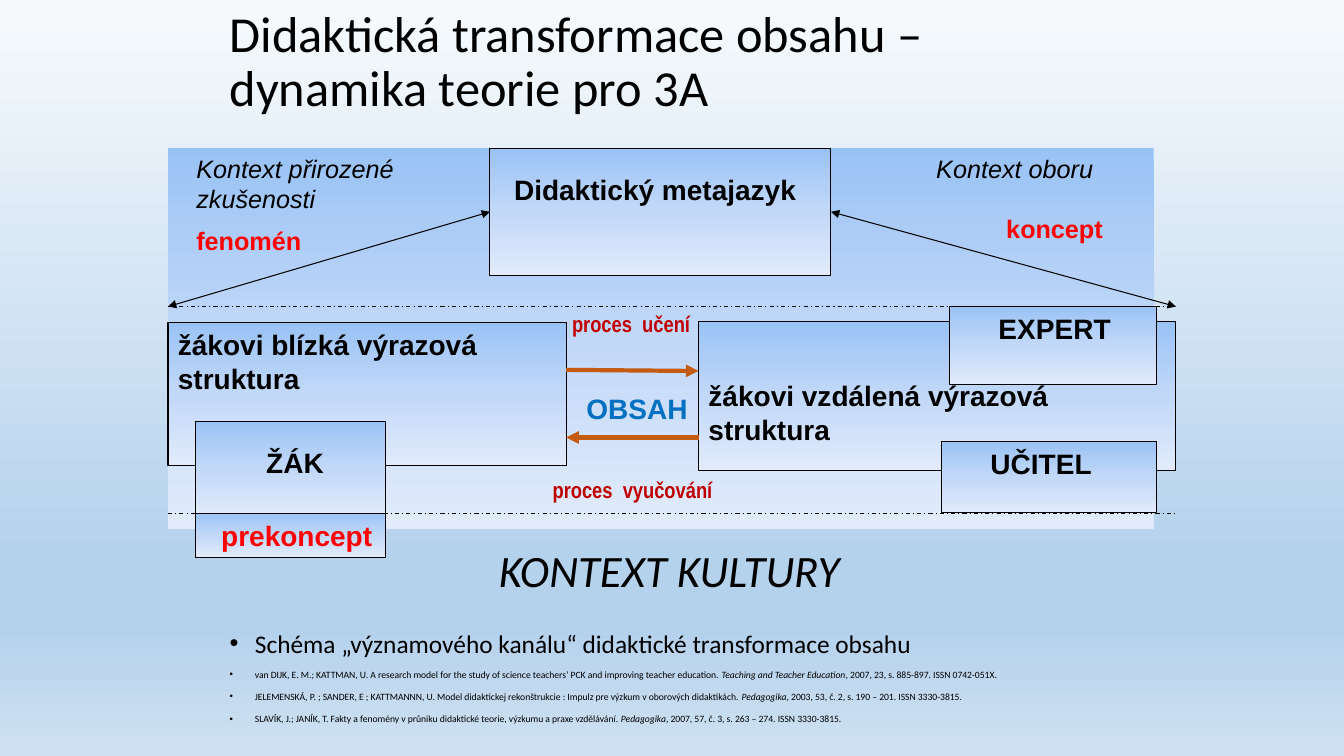
from lxml.etree import SubElement
from pptx import Presentation
from pptx.dml.color import RGBColor
from pptx.enum.dml import MSO_LINE
from pptx.enum.shapes import MSO_CONNECTOR, MSO_SHAPE
from pptx.enum.text import MSO_ANCHOR, PP_ALIGN
from pptx.oxml.ns import qn
from pptx.util import Pt

BLACK = RGBColor(0x00, 0x00, 0x00)
RED = RGBColor(0xFF, 0x00, 0x00)
DARK_RED = RGBColor(0xC0, 0x00, 0x00)
BLUE = RGBColor(0x00, 0x70, 0xC0)
ORANGE = RGBColor(0xC5, 0x5A, 0x11)

BACKGROUND_STOPS = [
    (0, RGBColor(0xF7, 0xFA, 0xFD)),
    (74, RGBColor(0xB5, 0xD2, 0xEC)),
    (83, RGBColor(0xB5, 0xD2, 0xEC)),
    (100, RGBColor(0xCE, 0xE1, 0xF2)),
]
BOX_STOPS = [
    (0, RGBColor(0x9A, 0xC3, 0xF5)),
    (50, RGBColor(0xC2, 0xD8, 0xF8)),
    (100, RGBColor(0xE1, 0xEB, 0xFB)),
]

LEFT, RIGHT = 120, 840
PANEL_TOP, UPPER_LINE, LOWER_LINE = 106, 219, 366.5
PUPIL_LEFT, PUPIL_WIDTH = 139.7, 136
NEAR_EDGE, FAR_EDGE = 404.4, 499

# Each reference: text before the journal, journal, text after it
REFERENCES = [
    ("van DIJK, E. M.; KATTMAN, U. A research model for the study of science teachers’ PCK "
     "and improving teacher education. ",
     "Teaching and Teacher Education", ", 2007, 23, s. 885-897. ISSN 0742-051X."),
    ("JELEMENSKÁ, P. ; SANDER, E ; KATTMANNN, U. Model didaktickej rekonštrukcie : "
     "Impulz pre výzkum v oborových didaktikách. ",
     "Pedagogika", ", 2003, 53, č. 2, s. 190 – 201. ISSN 3330-3815."),
    ("SLAVÍK, J.; JANÍK, T. Fakty a fenomény v průniku didaktické teorie, "
     "výzkumu a praxe vzdělávání. ",
     "Pedagogika", ", 2007, 57, č. 3, s. 263 – 274. ISSN 3330-3815."),
]


def fill_gradient(fill, element, stops):
    """Fill from top to bottom; element is the XML that holds the fill."""
    fill.gradient()
    fill.gradient_angle = 270
    stop_list = element.xpath(".//a:gsLst")[0]
    for stop in list(stop_list):
        stop_list.remove(stop)
    for position, color in stops:
        stop = SubElement(stop_list, qn("a:gs"), pos=str(position * 1000))
        SubElement(stop, qn("a:srgbClr"), val=str(color))


def style_font(paragraph, size, name="Arial", color=BLACK, bold=False, italic=None):
    font = paragraph.font
    font.size = Pt(size)
    font.name = name
    font.color.rgb = color
    font.bold = bold
    font.italic = italic


def add_box(slide, left, top, width, height, text="", margin_left=7.2, margin_top=3.6,
            color=BLACK, outlined=True):
    shape = slide.shapes.add_shape(MSO_SHAPE.RECTANGLE, Pt(left), Pt(top), Pt(width), Pt(height))
    shape.shadow.inherit = False
    fill_gradient(shape.fill, shape._element, BOX_STOPS)
    if outlined:
        shape.line.color.rgb = BLACK
        shape.line.width = Pt(0.75)
    else:
        shape.line.fill.background()
    if text:
        frame = shape.text_frame
        frame.vertical_anchor = MSO_ANCHOR.TOP
        frame.margin_left, frame.margin_top = Pt(margin_left), Pt(margin_top)
        paragraph = frame.paragraphs[0]
        paragraph.text = text
        paragraph.alignment = PP_ALIGN.LEFT
        style_font(paragraph, 20, color=color, bold=True)
    return shape


def add_text(slide, left, top, width, height, text, size, wrap=True, **font):
    """Add a text box and return its text frame."""
    frame = slide.shapes.add_textbox(Pt(left), Pt(top), Pt(width), Pt(height)).text_frame
    frame.word_wrap = wrap
    paragraph = frame.paragraphs[0]
    paragraph.text = text
    style_font(paragraph, size, **font)
    return frame


def add_context(slide, left, width, context, term, gap, indent=0):
    """Name a context in italics and, below it, its key term in red."""
    frame = add_text(slide, left, PANEL_TOP, width, 90, context, 18, italic=True)
    paragraph = frame.add_paragraph()
    paragraph.text = term
    paragraph.space_before = Pt(gap)
    paragraph._p.get_or_add_pPr().set("marL", str(Pt(indent)))
    style_font(paragraph, 18, color=RED, bold=True)


def add_line(slide, start, end, color=BLACK, width=0.75, dash=None, arrowheads=()):
    """arrowheads names the arrowed ends: headEnd is the start, tailEnd the end."""
    points = [Pt(value) for value in (*start, *end)]
    connector = slide.shapes.add_connector(MSO_CONNECTOR.STRAIGHT, *points)
    connector.line.color.rgb = color
    connector.line.width = Pt(width)
    if dash:
        connector.line.dash_style = dash
    line = connector.line._get_or_add_ln()
    for end_name in arrowheads:
        SubElement(line, qn(f"a:{end_name}"), type="triangle")
    SubElement(connector._element.spPr, qn("a:effectLst"))
    return connector


def format_bullet(paragraph, size):
    style_font(paragraph, size, name="Calibri")
    paragraph.line_spacing = 0.7
    paragraph.space_before = Pt(10)
    properties = paragraph._p.get_or_add_pPr()
    properties.set("marL", str(Pt(18)))
    properties.set("indent", str(Pt(-18)))
    bullet_font = properties.makeelement(qn("a:buFont"), {"typeface": "Arial"})
    bullet = properties.makeelement(qn("a:buChar"), {"char": "•"})
    run_defaults = properties.find(qn("a:defRPr"))
    run_defaults.addprevious(bullet_font)
    run_defaults.addprevious(bullet)


def add_sources(slide):
    frame = add_text(slide, 157, 451.4, 648, 79,
                     "Schéma „významového kanálu“ didaktické transformace obsahu", 18.1)
    format_bullet(frame.paragraphs[0], 18.1)
    for before, journal, after in REFERENCES:
        paragraph = frame.add_paragraph()
        for text in (before, journal, after):
            run = paragraph.add_run()
            run.text = text
            if text == journal:
                run.font.italic = True
        format_bullet(paragraph, 6.9)


def main():
    presentation = Presentation()
    presentation.slide_width, presentation.slide_height = Pt(960), Pt(540)
    slide = presentation.slides.add_slide(presentation.slide_layouts[6])
    fill_gradient(slide.background.fill, slide._element, BACKGROUND_STOPS)

    title = add_text(slide, 157, 0, 648, 90,
                     "Didaktická transformace obsahu – dynamika teorie pro 3A", 36, name="Calibri")
    title.vertical_anchor = MSO_ANCHOR.MIDDLE
    title.paragraphs[0].line_spacing = 0.9
    add_sources(slide)

    add_box(slide, LEFT, PANEL_TOP, 704, 272, outlined=False)
    add_box(slide, FAR_EDGE, 229.7, RIGHT - FAR_EDGE, 106.6,
            "žákovi vzdálená výrazová struktura", margin_top=41)
    add_box(slide, LEFT, 230.4, NEAR_EDGE - LEFT, 102.2, "žákovi blízká výrazová struktura")
    metalanguage = add_box(slide, 350, PANEL_TOP, 243.6, 90.6, "Didaktický metajazyk", 17.2, 17.4)

    for side, corner in ((1, LEFT), (3, RIGHT)):
        connector = add_line(slide, (corner, UPPER_LINE), (corner, UPPER_LINE),
                             arrowheads=("headEnd", "tailEnd"))
        connector.begin_connect(metalanguage, side)

    add_box(slide, PUPIL_LEFT, 301, PUPIL_WIDTH, 67.7, "ŽÁK", 50.5, 17.4)
    add_box(slide, 678.2, UPPER_LINE, 147.6, 55.4, "EXPERT", 35)
    add_context(slide, 133.2, 162.7, "Kontext přirozené zkušenosti", "fenomén", 8)
    add_context(slide, 661.7, 149, "Kontext oboru", "koncept", 21, indent=50)

    for height in (UPPER_LINE, LOWER_LINE):
        add_line(slide, (LEFT, height), (RIGHT, height), dash=MSO_LINE.DASH_DOT)
    add_line(slide, (NEAR_EDGE, 264.2), (FAR_EDGE, 265), ORANGE, 3, arrowheads=("tailEnd",))
    add_line(slide, (FAR_EDGE, 312.5), (NEAR_EDGE, 312.5), ORANGE, 3, arrowheads=("tailEnd",))

    process_font = {"name": "Arial Narrow", "color": DARK_RED, "bold": True}
    add_text(slide, 401.5, 218.2, 118, 45, "proces  učení", 16, **process_font)
    add_text(slide, 387.6, 336.2, 146, 24, "proces  vyučování", 16, **process_font)

    add_box(slide, 672.5, 315.4, 153.4, 51, "UČITEL", 35)
    add_box(slide, PUPIL_LEFT, LOWER_LINE, PUPIL_WIDTH, 31.5, "prekoncept", 18.3, color=RED)
    add_text(slide, 411.8, 275.8, 88, 31.5, "OBSAH", 20, wrap=False, color=BLUE, bold=True)
    add_text(slide, 349.2, 383.8, 261.4, 46, "KONTEXT KULTURY", 32, wrap=False,
             name="Calibri", italic=True)
    presentation.save("out.pptx")


if __name__ == "__main__":
    main()
